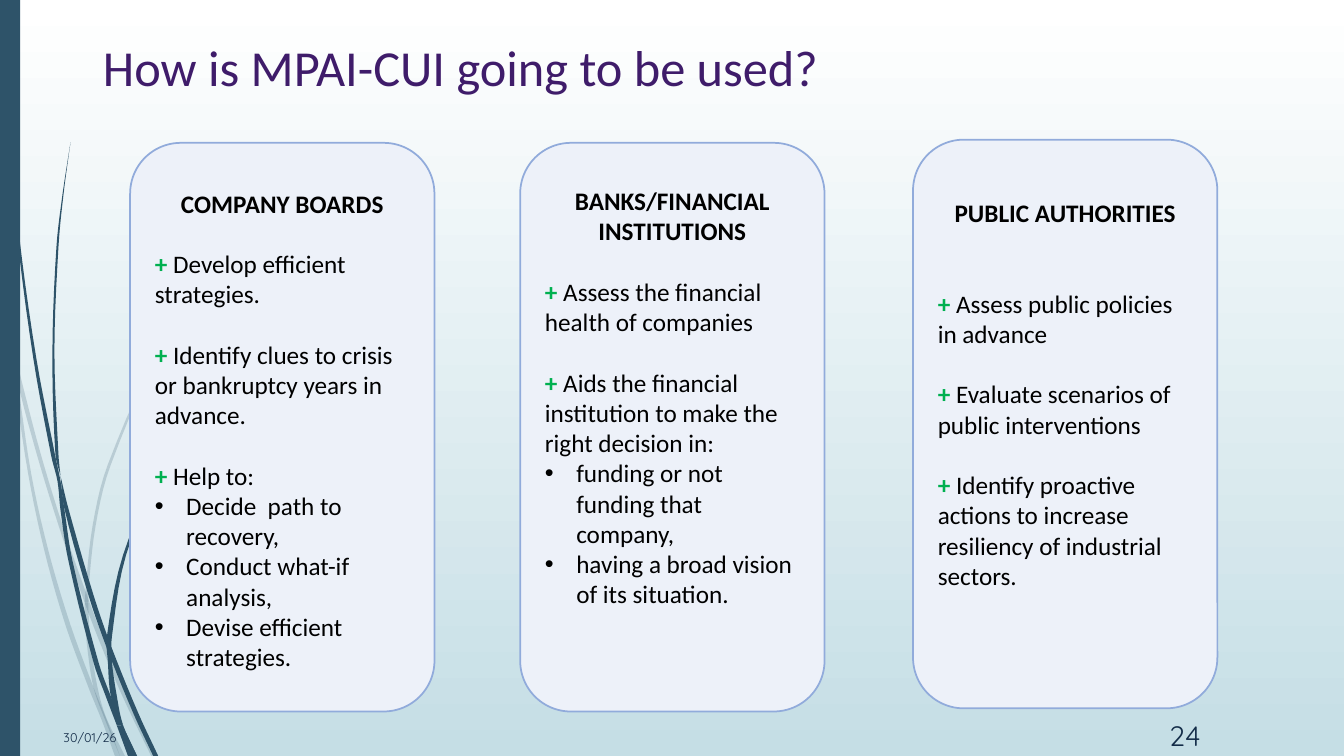
from dataclasses import dataclass

import pptx
import pptx.dml.color
import pptx.enum.shapes
import pptx.enum.text
import pptx.oxml
import pptx.oxml.ns
import pptx.util
from pptx.util import Cm, Pt

COLORS = {"sky": "FFFFFF", "mist": "C5DEE5", "blade": "2E5369", "title": "3F1C6A",
          "card": "EDF1F9", "border": "91ABDB", "text": "000000", "plus": "00B050",
          "footer": "132C48"}
ALIGN = pptx.enum.text.PP_ALIGN
ANCHOR = pptx.enum.text.MSO_ANCHOR
SHAPE = pptx.enum.shapes.MSO_SHAPE
BLADE_UNIT = Cm(0.0254)
BLADE_STEPS = 5
LINE_GAP = 21.6


@dataclass
class Blade:
    """Grass blade: rows of y, left and right edge; joints are heights where it is cut."""
    rows: list[tuple[float, float, float]]
    joints: tuple[int, ...] = ()
    opacity: int = 100


@dataclass
class Point:
    text: str
    bullets: tuple[str, ...] = ()


@dataclass
class Card:
    left: float
    top: float
    inset: float
    heading: str
    heading_gap: float
    points: list[Point]


@dataclass
class Footer:
    left: float
    top: float
    width: float
    text: str
    size: int


BLADES = [
    Blade([(282, 0, 0), (299, 0, 3.5), (322, 5, 9), (350, 11, 12), (376, 14, 17), (470, 28, 31),
           (546, 44, 48), (620, 65, 70), (685, 89, 94), (712, 100, 105), (750, 114, 119)],
          (350, 712), 20),
    Blade([(345, 14, 14), (376, 17, 21), (449, 36, 40), (521, 58, 62), (598, 84, 89),
           (652, 105, 110), (694, 123, 128), (750, 150, 155)], (598,), 20),
    Blade([(153, 312, 312), (197, 268, 269), (245, 228, 229), (348, 158, 160), (461, 107, 110),
           (521, 92, 95), (585, 85, 88), (610, 84, 88), (646, 87, 91), (683, 93, 97),
           (711, 103, 105), (750, 119, 124)], (585, 610, 711), 20),
    Blade([(0, 3, 4), (110, 7, 8), (233, 17, 19), (355, 33, 36), (453, 51, 55), (477, 57, 60),
           (506, 60, 64), (557, 68, 72), (658, 93, 98), (691, 105, 110), (720, 116, 122),
           (750, 127, 136)], (477, 720)),
    Blade([(472, 60, 60), (505, 64, 68), (591, 88, 93), (643, 106, 111), (707, 132, 137),
           (750, 152, 157)], (643,)),
    Blade([(141, 70, 70), (193, 62, 63), (245, 56, 58), (349, 52, 54), (451, 55, 58),
           (472, 60, 60)]),
    Blade([(344, 260, 261), (374, 231, 232), (406, 204, 205), (475, 156, 158), (551, 122, 125),
           (632, 106, 111), (656, 107, 111), (691, 110, 116), (719, 120, 122), (750, 133, 136)],
          (632, 656, 719)),
]

CARDS = [
    Card(3.28, 3.6, 0.76, "COMPANY BOARDS", LINE_GAP, [
        Point("Develop efficient strategies."),
        Point("Identify clues to crisis or bankruptcy years in advance."),
        Point("Help to:", ("Decide  path to recovery,", "Conduct what-if analysis,",
                           "Devise efficient strategies."))]),
    Card(13.11, 3.6, 0.7, "BANKS/FINANCIAL INSTITUTIONS", LINE_GAP, [
        Point("Assess the financial health of companies"),
        Point("Aids the financial institution to make the right decision in:",
              ("funding or not funding that company,", "having a broad vision of its situation."))]),
    Card(23.01, 3.52, 1.08, "PUBLIC AUTHORITIES", 2 * LINE_GAP, [
        Point("Assess public policies in advance"),
        Point("Evaluate scenarios of public interventions"),
        Point("Identify proactive actions to increase resiliency of industrial sectors.")]),
]
FOOTERS = [Footer(0, 18.06, 3.18, "30/01/26", 9), Footer(28.35, 18.01, 2.16, "24", 20)]


def rgb(name: str) -> pptx.dml.color.RGBColor:
    return pptx.dml.color.RGBColor.from_string(COLORS[name])


def style_font(font, name: str, size: int, color: str, bold: bool = False) -> None:
    font.name, font.size, font.bold = name, Pt(size), bold
    font.color.rgb = rgb(color)


def paint(shape, color: str) -> None:
    shape.shadow.inherit = False
    shape.fill.solid()
    shape.fill.fore_color.rgb = rgb(color)
    shape.line.fill.background()


def make_element(tag: str):
    return pptx.oxml.parse_xml(f"<a:{tag} {pptx.oxml.ns.nsdecls('a')}/>")


def smooth_edge(ys: tuple, xs: tuple) -> list[tuple[float, float]]:
    """Run a smooth curve from top to bottom through the given points."""
    last = len(ys) - 1
    spans = [(max(i - 1, 0), min(i + 1, last)) for i in range(last + 1)]
    slopes = [(xs[b] - xs[a]) / (ys[b] - ys[a]) for a, b in spans]
    curve = []
    for i in range(last):
        height = ys[i + 1] - ys[i]
        for t in (step / BLADE_STEPS for step in range(BLADE_STEPS)):
            x = xs[i] + t * t * (3 - 2 * t) * (xs[i + 1] - xs[i])
            x += height * t * (1 - t) * ((1 - t) * slopes[i] - t * slopes[i + 1])
            curve.append((x * BLADE_UNIT, (ys[i] + t * height) * BLADE_UNIT))
    return curve + [(xs[last] * BLADE_UNIT, ys[last] * BLADE_UNIT)]


def draw_blade(page, blade: Blade) -> None:
    ys, lefts, rights = zip(*blade.rows)
    left_edge, right_edge = smooth_edge(ys, lefts), smooth_edge(ys, rights)
    cuts = [ys.index(y) * BLADE_STEPS for y in (ys[0], *blade.joints, ys[-1])]
    for start, end in zip(cuts, cuts[1:]):
        outline = left_edge[start:end + 1] + right_edge[start:end + 1][::-1]
        builder = page.shapes.build_freeform(*outline[0])
        builder.add_line_segments(outline[1:], close=True)
        shape = builder.convert_to_shape()
        paint(shape, "blade")
        if blade.opacity < 100:
            fill_color = shape._element.spPr.find(".//" + pptx.oxml.ns.qn("a:srgbClr"))
            fill_color.append(make_element(f'alpha val="{blade.opacity * 1000}"'))


def draw_card(page, card: Card) -> None:
    box = page.shapes.add_shape(SHAPE.ROUNDED_RECTANGLE, Cm(card.left), Cm(card.top),
                                Cm(7.67), Cm(14.33))
    paint(box, "card")
    box.line.color.rgb, box.line.width = rgb("border"), Pt(1.25)
    frame = box.text_frame
    frame.word_wrap, frame.vertical_anchor = True, ANCHOR.TOP
    frame.margin_top = Cm(card.inset)
    heading = frame.paragraphs[0]
    heading.alignment, heading.text = ALIGN.CENTER, card.heading
    style_font(heading.font, "Calibri", 18, "text", True)
    for index, point in enumerate(card.points):
        para = frame.add_paragraph()
        para.alignment = ALIGN.LEFT
        para.space_before = Pt(LINE_GAP if index else card.heading_gap)
        for text, color, bold in (("+ ", "plus", True), (point.text, "text", False)):
            span = para.add_run()
            span.text = text
            style_font(span.font, "Calibri", 18, color, bold)
        for bullet in point.bullets:
            para = frame.add_paragraph()
            para.alignment, para.text = ALIGN.LEFT, bullet
            properties = para._p.get_or_add_pPr()
            properties.set("marL", str(Cm(0.79)))
            properties.set("indent", str(-Cm(0.79)))
            properties.append(make_element('buFont typeface="Arial"'))
            properties.append(make_element('buChar char="•"'))
            style_font(para.font, "Calibri", 18, "text")


def draw_footer(page, footer: Footer) -> None:
    box = page.shapes.add_textbox(Cm(footer.left), Cm(footer.top), Cm(footer.width), Cm(1.03))
    box.text_frame.word_wrap, box.text_frame.vertical_anchor = True, ANCHOR.MIDDLE
    para = box.text_frame.paragraphs[0]
    para.alignment, para.text = ALIGN.RIGHT, footer.text
    style_font(para.font, "Quicksand", footer.size, "footer")


def main() -> None:
    deck = pptx.Presentation()
    deck.slide_width, deck.slide_height = Cm(33.87), Cm(19.05)
    page = deck.slides.add_slide(deck.slide_layouts[5])
    # Background
    fill = page.background.fill
    fill.gradient()
    fill.gradient_angle = 270
    for stop, position, color in zip(fill.gradient_stops, (0, 1), ("sky", "mist")):
        stop.position, stop.color.rgb = position, rgb(color)
    # Grass and side bar
    for blade in BLADES:
        draw_blade(page, blade)
    paint(page.shapes.add_shape(SHAPE.RECTANGLE, 0, 0, Cm(0.51), deck.slide_height), "blade")
    # Title
    title = page.shapes.title
    title.left, title.top, title.width, title.height = Cm(2.34), Cm(0.79), Cm(29.21), Cm(2.64)
    title.text_frame.auto_size = pptx.enum.text.MSO_AUTO_SIZE.NONE
    title.text_frame.vertical_anchor = ANCHOR.TOP
    para = title.text_frame.paragraphs[0]
    para.alignment, para.text = ALIGN.LEFT, "How is MPAI-CUI going to be used?"
    style_font(para.font, "Calibri", 36, "title")
    # Cards and footers
    for card in CARDS:
        draw_card(page, card)
    for footer in FOOTERS:
        draw_footer(page, footer)
    deck.save("out.pptx")


if __name__ == "__main__":
    main()
